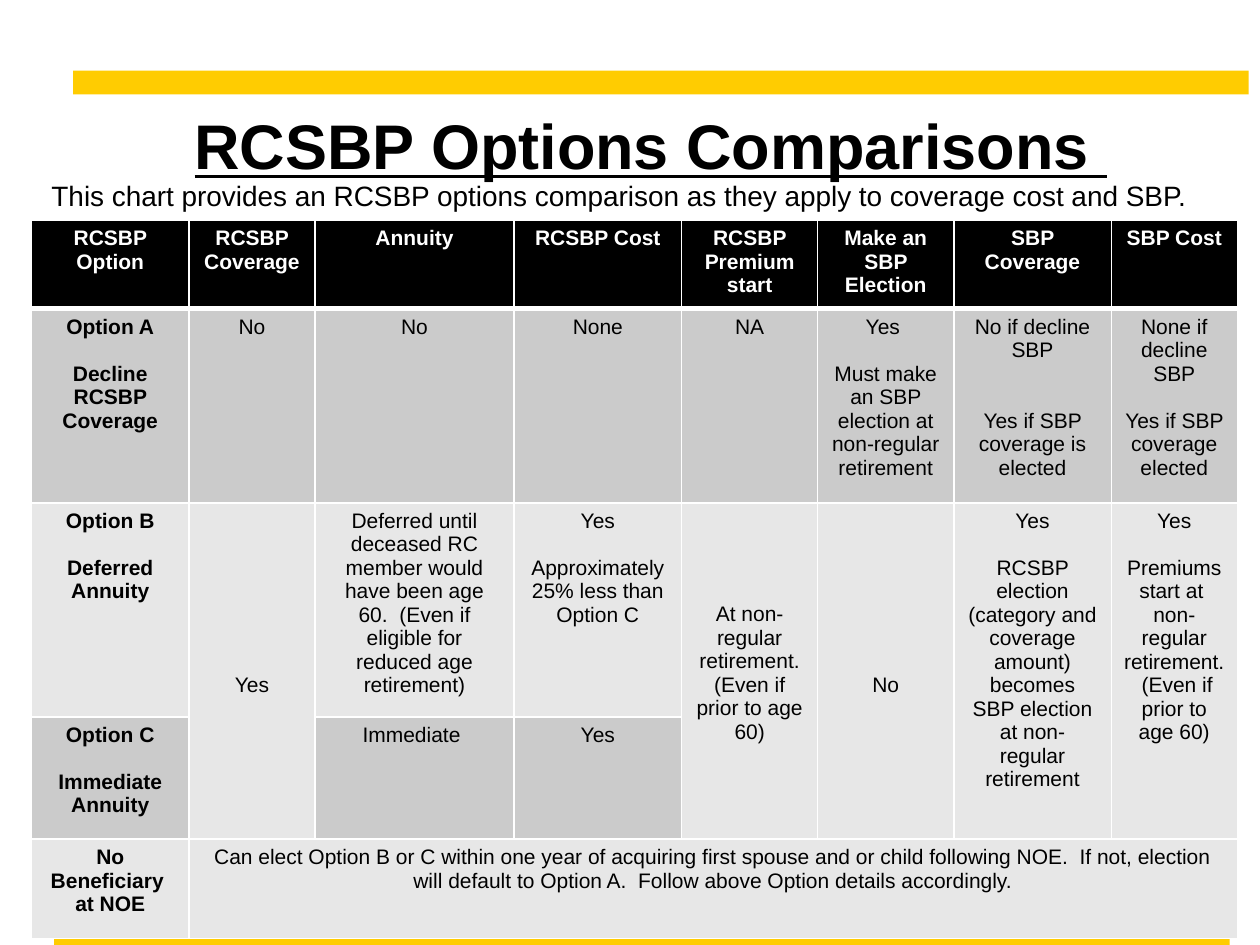
from lxml import etree
from pptx import Presentation
from pptx.dml.color import RGBColor
from pptx.enum.shapes import MSO_SHAPE
from pptx.enum.text import MSO_ANCHOR, PP_ALIGN
from pptx.oxml.ns import qn
from pptx.util import Inches, Pt

RECTANGLE = MSO_SHAPE.RECTANGLE
CENTER, LEFT = PP_ALIGN.CENTER, PP_ALIGN.LEFT
TOP = MSO_ANCHOR.TOP

FONT = "Arial"
COLORS = {
    "gold": "FFCC01",
    "black": "000000",
    "white": "FFFFFF",
    "dark": "CBCBCB",
    "light": "E7E7E7",
}
LINE = 13.4  # height in points of one line of table text

COLUMN_WIDTHS = [1.25, 1, 1.58, 1.33, 1.08, 1.08, 1.25, 1]
ROW_HEIGHTS = [0.7, 1.54, 1.53, 0.97, 0.79]
ROW_FILLS = ["black", "dark", "light", "dark", "light"]

# Each cell is a list of (lines of space above, text); None is covered by a merge
CELLS = [
    [[(0, heading)] for heading in (
        "RCSBP Option", "RCSBP Coverage", "Annuity", "RCSBP Cost",
        "RCSBP Premium start", "Make an SBP Election", "SBP Coverage", "SBP Cost")],
    [
        [(0, "Option A"), (1, "Decline RCSBP Coverage")],
        [(0, "No")],
        [(0, "No")],
        [(0, "None")],
        [(0, "NA")],
        [(0, "Yes "), (1, "Must make an SBP election at non-regular retirement")],
        [(0, "No if decline SBP"), (2, "Yes if SBP coverage is elected")],
        [(0, "None if decline SBP"), (1, "Yes if SBP coverage elected")],
    ],
    [
        [(0, "Option B"), (1, "Deferred Annuity")],
        [(7, "Yes")],
        [(0, "Deferred until deceased RC member would have been age 60.  "
             "(Even if eligible for reduced age retirement)")],
        [(0, "Yes"), (1, "Approximately 25% less than Option C")],
        [(4, "At non-regular retirement. (Even if prior to age 60)")],
        [(7, "No")],
        [(0, "Yes"), (1, "RCSBP election (category and coverage amount) becomes "
                         "SBP election at non- regular retirement")],
        [(0, "Yes"), (1, "Premiums start at  non-regular retirement.  "
                         "(Even if prior to age 60)")],
    ],
    [
        [(0, "Option C"), (1, "Immediate Annuity")],
        None,
        [(0, "Immediate ")],
        [(0, "Yes")],
        None, None, None, None,
    ],
    [
        [(0, "No Beneficiary "), (0, "at NOE")],
        [(0, "Can elect Option B or C within one year of acquiring first spouse and or "
             "child following NOE.  If not, election will default to Option A.  "
             "Follow above Option details accordingly.")],
        None, None, None, None, None, None,
    ],
]


def rgb(name):
    return RGBColor.from_string(COLORS[name])


def style_paragraph(para, size, color="black", bold=False, align=CENTER):
    para.alignment = align
    para.font.name = FONT
    para.font.size = Pt(size)
    para.font.bold = bold
    para.font.color.rgb = rgb(color)


def add_bar(page, left, top):
    bar = page.shapes.add_shape(
        RECTANGLE, Inches(left), Inches(top), Inches(9.33), Inches(0.19))
    bar.shadow.inherit = False
    bar.fill.solid()
    bar.fill.fore_color.rgb = rgb("gold")
    bar.line.fill.background()


def add_text(page, left, top, width, height, text, size, **style):
    box = page.shapes.add_textbox(
        Inches(left), Inches(top), Inches(width), Inches(height))
    frame = box.text_frame
    frame.word_wrap = True
    frame.vertical_anchor = TOP
    para = frame.paragraphs[0]
    para.text = text
    style_paragraph(para, size, **style)
    return para


def set_borders(cell, widths):
    """Draw white cell edges; widths are points for left, right, top, bottom."""
    properties = cell._tc.get_or_add_tcPr()
    for position, (side, width) in enumerate(zip("LRTB", widths)):
        line = etree.Element(qn(f"a:ln{side}"), w=str(Pt(width)))
        fill = etree.SubElement(line, qn("a:solidFill"))
        etree.SubElement(fill, qn("a:srgbClr"), val=COLORS["white"])
        properties.insert(position, line)


def fill_cell(cell, content, color, bold):
    frame = cell.text_frame
    for index, (gap, text) in enumerate(content):
        para = frame.paragraphs[0] if index == 0 else frame.add_paragraph()
        para.text = text
        style_paragraph(para, 12, color, bold)
        if index == 0:
            cell.margin_top = Inches(0.05) + Pt(gap * LINE)
        elif gap:
            para.space_before = Pt(gap * LINE)


def add_options_table(page):
    table = page.shapes.add_table(
        len(ROW_HEIGHTS), len(COLUMN_WIDTHS), Inches(0.25), Inches(1.75),
        Inches(sum(COLUMN_WIDTHS)), Inches(sum(ROW_HEIGHTS))).table
    for column, width in zip(table.columns, COLUMN_WIDTHS):
        column.width = Inches(width)
    for row, height in zip(table.rows, ROW_HEIGHTS):
        row.height = Inches(height)

    # Options B and C share five columns; the last row has one wide note
    for column in (1, 4, 5, 6, 7):
        table.cell(2, column).merge(table.cell(3, column))
    table.cell(4, 1).merge(table.cell(4, 7))

    for row, contents in enumerate(CELLS):
        for column, content in enumerate(contents):
            cell = table.cell(row, column)
            cell.fill.solid()
            cell.fill.fore_color.rgb = rgb(ROW_FILLS[row])
            # A thick rule parts the header from the body
            set_borders(cell, (1, 1, 3 if row == 1 else 1, 3 if row == 0 else 1))
            if content:
                fill_cell(cell, content, "white" if row == 0 else "black",
                          bold=row == 0 or column == 0)


def main():
    deck = Presentation()
    deck.slide_width, deck.slide_height = Inches(10), Inches(7.5)
    page = deck.slides.add_slide(deck.slide_layouts[6])

    # Gold bars
    add_bar(page, 0.58, 0.56)
    add_bar(page, 0.43, 7.31)

    # Title and introduction
    title = add_text(page, 0.83, 0.8, 8.67, 0.5, "RCSBP Options Comparisons ", 36, bold=True)
    title.font.underline = True
    add_text(page, 0.31, 1.37, 9.52, 0.38,
             "This chart provides an RCSBP options comparison as they apply to "
             "coverage cost and SBP.", 16, align=LEFT)

    # Comparison of the options
    add_options_table(page)

    deck.save("out.pptx")


if __name__ == "__main__":
    main()
